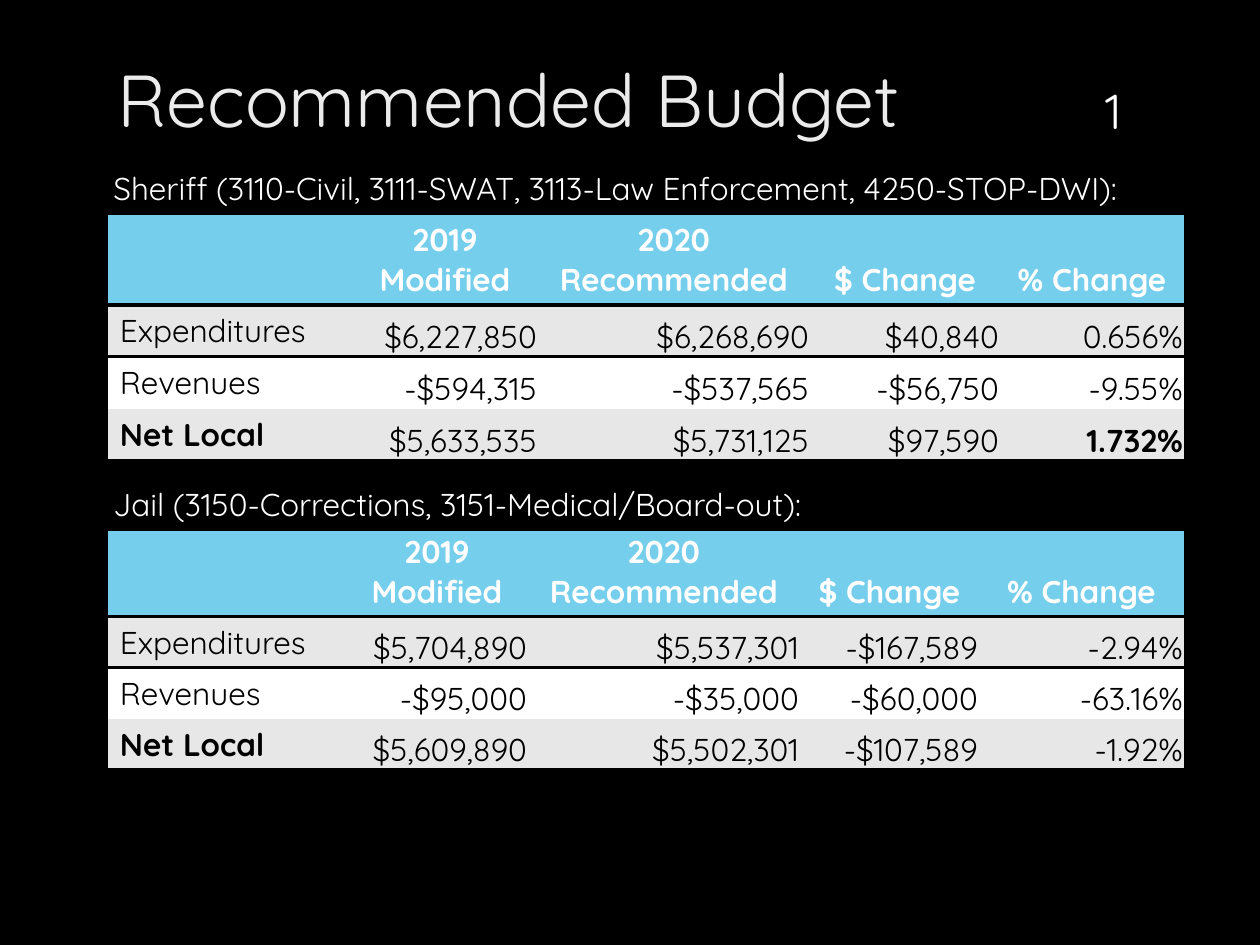
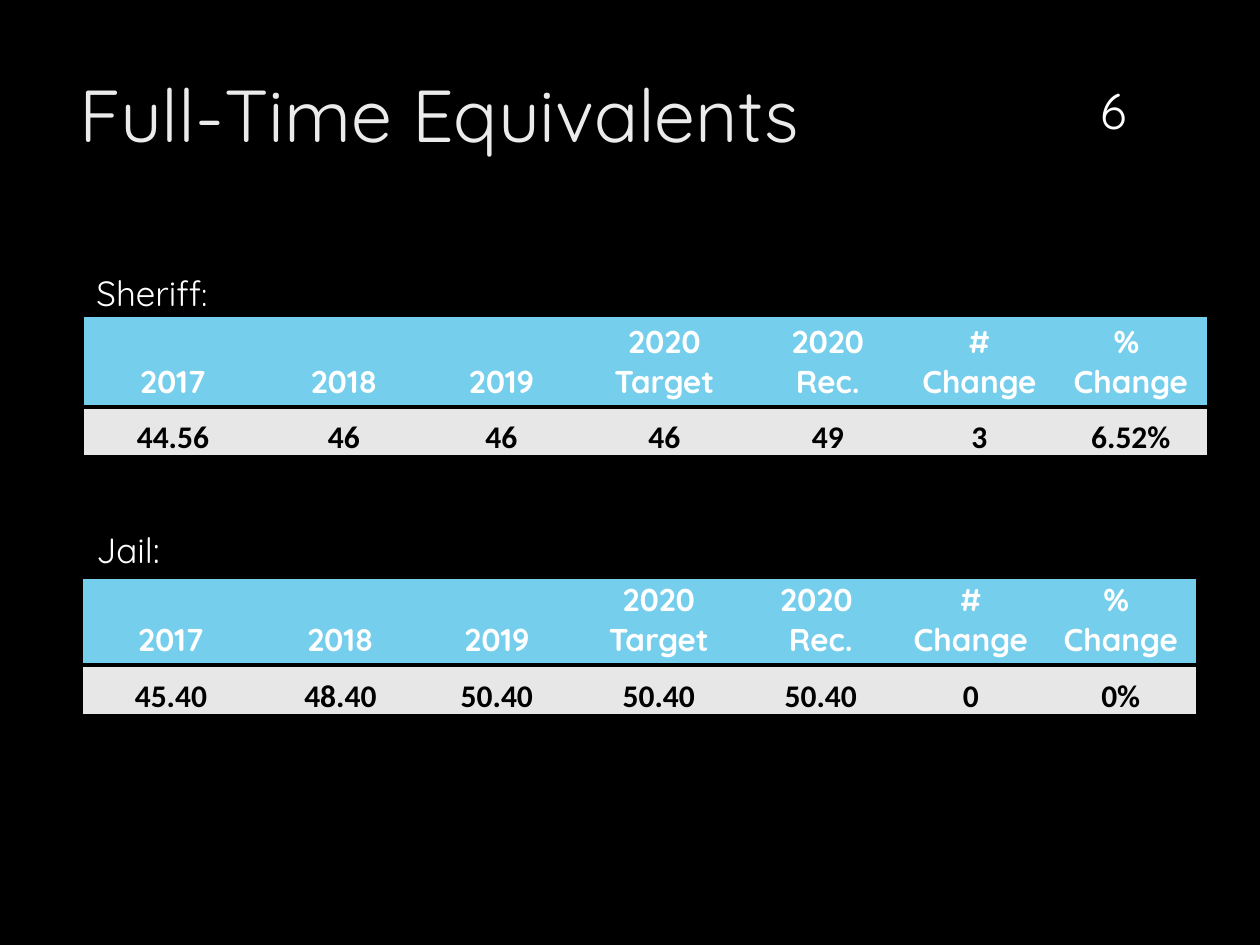
from dataclasses import dataclass

import pptx
import pptx.dml.color
import pptx.enum.text
import pptx.oxml
import pptx.oxml.ns
import pptx.util

EMU_PER_PX = 914400 / 126
ALIGN = pptx.enum.text.PP_ALIGN
ANCHOR = pptx.enum.text.MSO_ANCHOR
PLAIN_TABLE_STYLE = "{2D5ABB26-0587-4C30-8999-92F81FD0307C}"


@dataclass(frozen=True)
class Theme:
    font: str = "Quicksand"
    figure_font: str = "Calibri"
    black: str = "000000"
    white: str = "FFFFFF"
    title: str = "EBEBEB"
    header: str = "75CEEC"
    band: str = "E7E7E7"
    title_size: int = 42
    number_size: int = 28
    label_size: int = 20
    body_size: int = 18
    rule_width: int = 2


THEME = Theme()

BUDGET_HEADER = ["", "2019\nModified", "2020\nRecommended", "$ Change", "% Change"]
SHERIFF_BUDGET = [
    ["Expenditures", "$6,227,850", "$6,268,690", "$40,840", "0.656%"],
    ["Revenues", "-$594,315", "-$537,565", "-$56,750", "-9.55%"],
    ["Net Local", "$5,633,535", "$5,731,125", "$97,590", "1.732%"],
]
JAIL_BUDGET = [
    ["Expenditures", "$5,704,890", "$5,537,301", "-$167,589", "-2.94%"],
    ["Revenues", "-$95,000", "-$35,000", "-$60,000", "-63.16%"],
    ["Net Local", "$5,609,890", "$5,502,301", "-$107,589", "-1.92%"],
]
FTE_YEARS = ["2017", "2018", "2019", "2020 Target"]
FTE_CHANGES = ["#\nChange", "% \nChange"]
SHERIFF_FTE = ["44.56", "46", "46", "46", "49", "3", "6.52%"]
JAIL_FTE = ["45.40", "48.40", "50.40", "50.40", "50.40", "0", "0%"]


def px(n):
    return pptx.util.Emu(round(n * EMU_PER_PX))


def rgb(color):
    return pptx.dml.color.RGBColor.from_string(color)


def style_run(r, size, color, bold=False, font=THEME.font):
    r.font.name = font
    r.font.size = pptx.util.Pt(size)
    r.font.bold = bold
    r.font.color.rgb = rgb(color)


def add_titled_slide(prs, title, box, number):
    s = prs.slides.add_slide(prs.slide_layouts[5])
    sp = s.shapes.title
    sp.left, sp.top, sp.width, sp.height = map(px, box)
    tf = sp.text_frame
    tf.text = title
    tf.auto_size = pptx.enum.text.MSO_AUTO_SIZE.NONE
    tf.vertical_anchor = ANCHOR.TOP
    p = tf.paragraphs[0]
    p.alignment = ALIGN.LEFT
    style_run(p.runs[0], THEME.title_size, THEME.title)
    add_text(s, (1070, 40, 87, 106), [(number, THEME.number_size)],
             ALIGN.CENTER, ANCHOR.BOTTOM)
    return s


def add_text(s, box, parts, align=ALIGN.LEFT, anchor=ANCHOR.TOP):
    """Add a one-line text box; parts are (text, size) pairs."""
    tf = s.shapes.add_textbox(*map(px, box)).text_frame
    tf.word_wrap = True
    tf.vertical_anchor = anchor
    p = tf.paragraphs[0]
    p.alignment = align
    for text, size in parts:
        r = p.add_run()
        r.text = text
        style_run(r, size, THEME.white)


def add_rule(cell, side):
    """Draw a black border on side "T" or "B" of the cell."""
    tag = f"a:ln{side}"
    width = pptx.util.Pt(THEME.rule_width)
    ln = pptx.oxml.parse_xml(
        f'<{tag} {pptx.oxml.ns.nsdecls("a")} w="{width}"><a:solidFill>'
        f'<a:srgbClr val="{THEME.black}"/></a:solidFill></{tag}>')
    cell.fill.background()
    tc_pr = next(c for c in cell.text_frame._txBody.getparent()
                 if c.tag == pptx.oxml.ns.qn("a:tcPr"))
    tc_pr.insert(len(tc_pr) - 1, ln)


def fill_cell(cell, text, fill, color, align, anchor=ANCHOR.BOTTOM,
              bold=False, font=THEME.font, margins=(1, 1, 1, 0)):
    """Fill a table cell; margins are left, top, right, bottom in px."""
    cell.fill.solid()
    cell.fill.fore_color.rgb = rgb(fill)
    cell.vertical_anchor = anchor
    (cell.margin_left, cell.margin_top,
     cell.margin_right, cell.margin_bottom) = map(px, margins)
    cell.text_frame.text = text
    for p in cell.text_frame.paragraphs:
        p.alignment = align
        for r in p.runs:
            style_run(r, THEME.body_size, color, bold, font)


def add_ruled_table(s, left, top, widths, heights, header):
    """Add a table with its header row and black rules, and return it."""
    gf = s.shapes.add_table(len(heights), len(widths), px(left), px(top),
                            px(sum(widths)), px(sum(heights)))
    style = next(gf.element.iter(pptx.oxml.ns.qn("a:tableStyleId")))
    style.text = PLAIN_TABLE_STYLE
    table = gf.table
    for column, width in zip(table.columns, widths):
        column.width = px(width)
    for row, height in zip(table.rows, heights):
        row.height = px(height)
    for col, text in enumerate(header):
        cell = table.cell(0, col)
        add_rule(cell, "T")
        add_rule(cell, "B")
        add_rule(table.cell(1, col), "T")
        add_rule(table.cell(len(heights) - 1, col), "B")
        fill_cell(cell, text, THEME.header, THEME.white, ALIGN.CENTER,
                  bold=True, margins=(12, 3, 12, 6))
    return table


def add_budget_table(s, top, widths, heights, rows, bold_texts):
    table = add_ruled_table(s, 108, top, widths, heights, BUDGET_HEADER)
    for i, row in enumerate(rows, start=1):
        fill = THEME.band if i % 2 else THEME.white
        for col, text in enumerate(row):
            bold = text in bold_texts
            if col == 0:
                fill_cell(table.cell(i, col), text, fill, THEME.black, ALIGN.LEFT,
                          ANCHOR.TOP, bold, margins=(12, 6, 12, 3))
            else:
                fill_cell(table.cell(i, col), text, fill, THEME.black,
                          ALIGN.RIGHT, bold=bold)


def add_fte_table(s, left, top, widths, heights, recommended, figures):
    header = FTE_YEARS + [recommended] + FTE_CHANGES
    table = add_ruled_table(s, left, top, widths, heights, header)
    for col, text in enumerate(figures):
        fill_cell(table.cell(1, col), text, THEME.band, THEME.black, ALIGN.CENTER,
                  bold=True, font=THEME.figure_font)


def add_budget_slide(prs):
    s = add_titled_slide(prs, "Recommended Budget", (105, 48, 1071, 222), "1")
    add_text(s, (101, 163, 1106, 50),
             [("Sheriff (3110-Civil, 3111-SWAT, 3113-Law Enforcement, 4250-STOP-DWI):",
               THEME.body_size)])
    add_budget_table(s, 213, [244, 186, 272, 190, 184], [92, 52, 52, 52],
                     SHERIFF_BUDGET, ["Net Local", "1.732%"])
    add_text(s, (101, 479, 897, 50),
             [("Jail (3150-Corrections, 3151-Medical/Board-out):", THEME.body_size)])
    add_budget_table(s, 529, [238, 182, 272, 179, 205], [88, 51, 51, 51],
                     JAIL_BUDGET, ["Net Local"])


def add_fte_slide(prs):
    s = add_titled_slide(prs, "Full-Time Equivalents", (67, 63, 973, 193), "6")
    add_text(s, (84, 265, 514, 55),
             [("Sheriff", THEME.label_size), (":", THEME.body_size)])
    add_fte_table(s, 84, 315, [178, 164, 151, 175, 152, 151, 152], [92, 50],
                  "2020\nRec.", SHERIFF_FTE)
    add_text(s, (84, 522, 514, 55), [("Jail:", THEME.label_size)])
    add_fte_table(s, 83, 577, [176, 163, 150, 174, 150, 150, 150], [88, 51],
                  "2020 \nRec.", JAIL_FTE)


def main():
    prs = pptx.Presentation()
    prs.slide_width, prs.slide_height = px(1260), px(945)
    background = prs.slide_master.background.fill
    background.solid()
    background.fore_color.rgb = rgb(THEME.black)
    add_budget_slide(prs)
    add_fte_slide(prs)
    prs.save("out.pptx")


if __name__ == "__main__":
    main()
